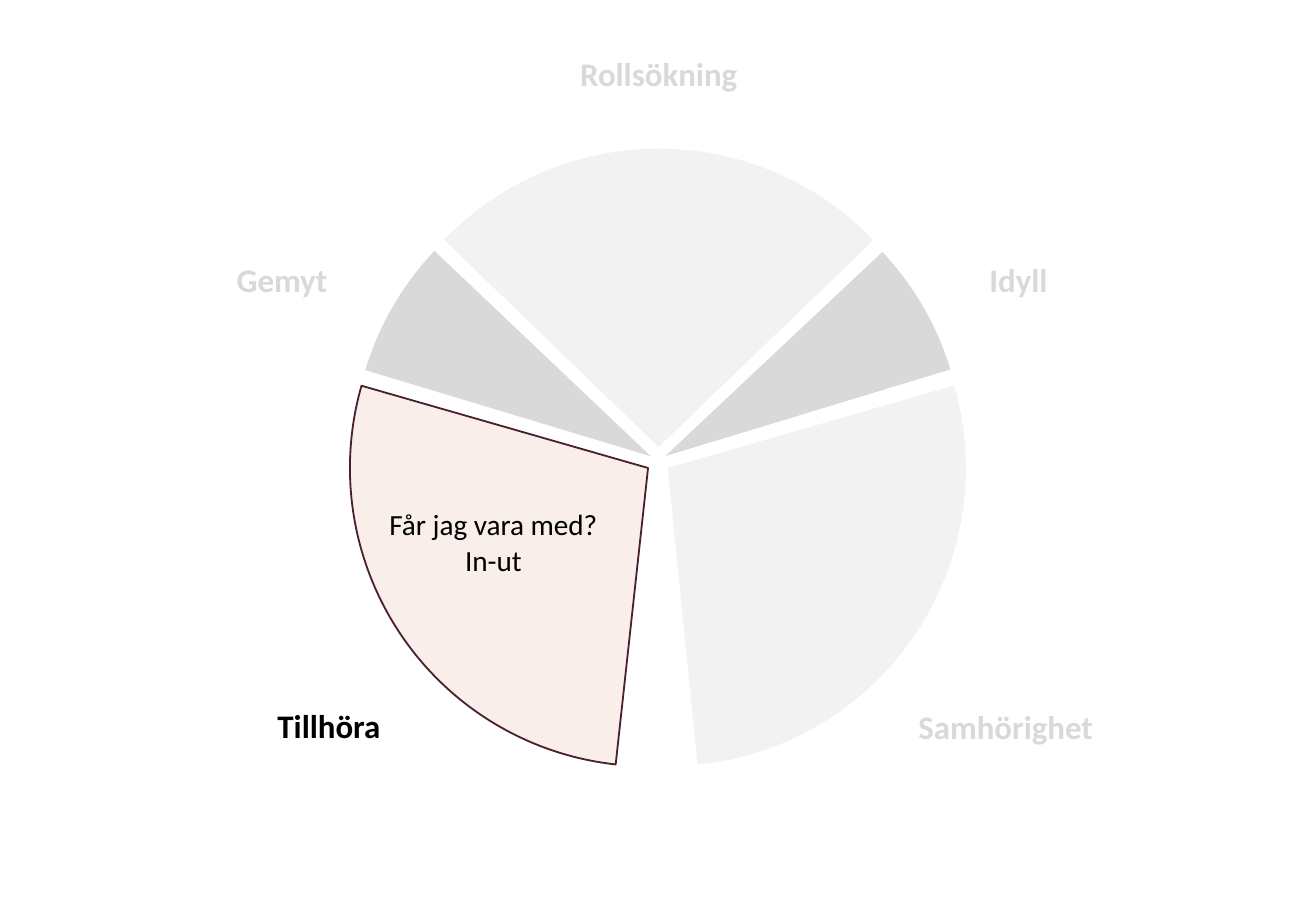
from pptx import Presentation
from pptx.dml.color import RGBColor
from pptx.enum.shapes import MSO_SHAPE
from pptx.enum.text import MSO_AUTO_SIZE, PP_ALIGN
from pptx.util import Inches, Pt

BLACK = RGBColor(0x00, 0x00, 0x00)
PALE_GREY = RGBColor(0xF2, 0xF2, 0xF2)
GREY = RGBColor(0xD9, 0xD9, 0xD9)
BLUSH = RGBColor(0xF9, 0xEE, 0xE9)
WINE = RGBColor(0x4A, 0x1F, 0x2F)

prs = Presentation()
prs.slide_width, prs.slide_height = Inches(10), Inches(6.95)
slide = prs.slides.add_slide(prs.slide_layouts[6])

# Grid of 100 columns with square cells
CELL = prs.slide_width / 100
DIAMETER = 45.3


def grid(*cells):
    return [round(cell * CELL) for cell in cells]


def add_text(box, lines, size, color, bold=False, align=PP_ALIGN.LEFT, wrap=False):
    frame = slide.shapes.add_textbox(*grid(*box)).text_frame
    frame.word_wrap = wrap
    frame.auto_size = MSO_AUTO_SIZE.SHAPE_TO_FIT_TEXT
    frame.text = "\n".join(lines)
    for paragraph in frame.paragraphs:
        paragraph.alignment = align
        for run in paragraph.runs:
            run.font.name = "Calibri"
            run.font.size = Pt(size)
            run.font.bold = bold
            run.font.color.rgb = color


# Wheel sectors: left, top, start and end angle (clockwise from east), fill, outline
sectors = [
    (27.4, 11.3, 223.97, 316.12, PALE_GREY, None),  # Rollsökning
    (26.6, 12.9, 96.23, 196.01, BLUSH, WINE),       # Tillhöra
    (28.1, 12.9, 343.94, 84.25, PALE_GREY, None),   # Samhörighet
    (27.9, 12.0, 316.78, 343.1, GREY, None),        # Idyll
    (26.8, 12.0, 196.76, 223.49, GREY, None),       # Gemyt
]
for left, top, start, end, fill, outline in sectors:
    sector = slide.shapes.add_shape(MSO_SHAPE.PIE, *grid(left, top, DIAMETER, DIAMETER))
    # One degree is 60000 angle units; adjustments count in units of 100000
    sector.adjustments[0] = start * 0.6
    sector.adjustments[1] = end * 0.6
    sector.shadow.inherit = False
    sector.fill.solid()
    sector.fill.fore_color.rgb = fill
    if outline:
        sector.line.color.rgb = outline
        sector.line.width = Pt(1)
    else:
        sector.line.fill.background()

# Question inside the highlighted sector
add_text((27.3, 38, 20.4, 6.4), ["Får jag vara med?", "In-ut"], 16, BLACK,
         align=PP_ALIGN.CENTER, wrap=True)

# Phase labels around the wheel
phases = [
    ("Rollsökning", 43.1, 3.6, 14.0, GREY),
    ("Idyll", 74.2, 19.2, 6.5, GREY),
    ("Gemyt", 17.0, 19.2, 9.0, GREY),
    ("Samhörighet", 68.8, 53.2, 15.4, GREY),
    ("Tillhöra", 20.1, 53.1, 9.9, BLACK),
]
for phase, left, top, width, color in phases:
    add_text((left, top, width, 4), [phase], 18, color, bold=True)

prs.save("out.pptx")
